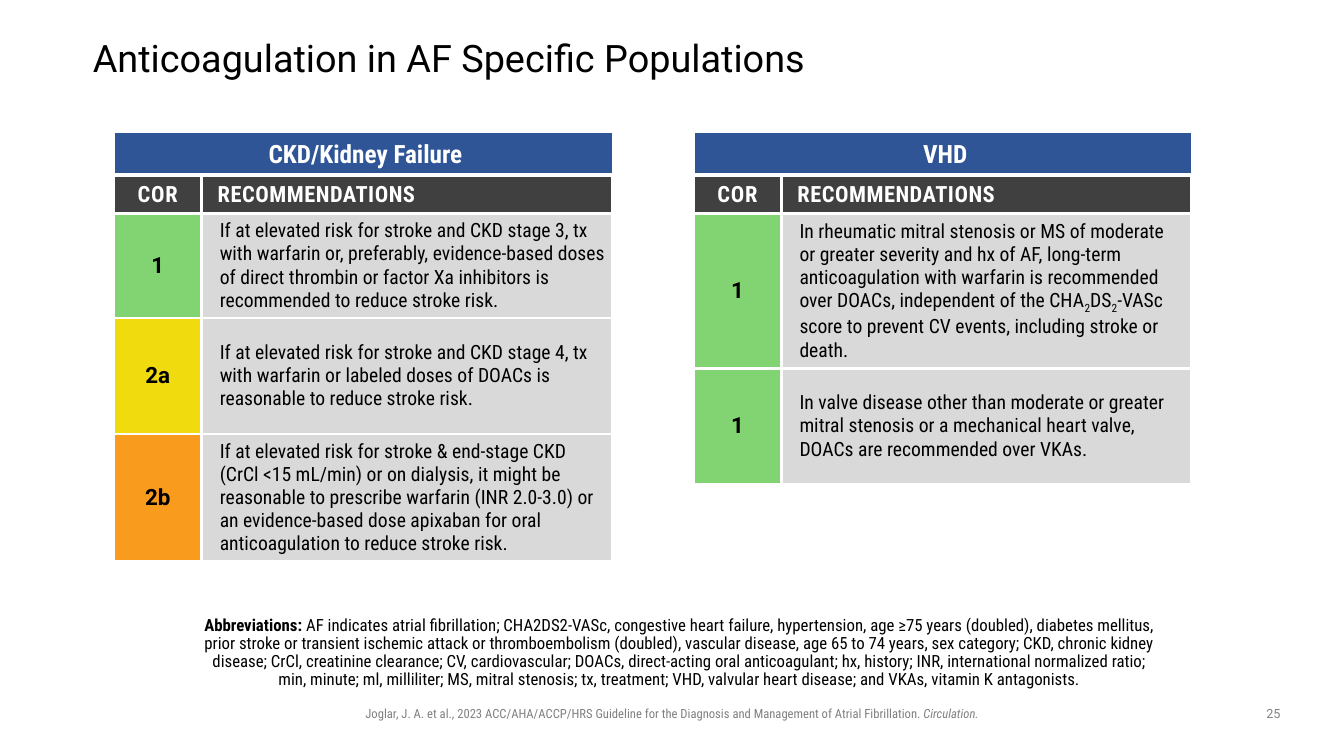
from dataclasses import dataclass
from typing import Any, NamedTuple

from lxml import etree
from pptx import Presentation
from pptx import util as u
from pptx.dml.color import RGBColor
from pptx.enum import shapes, text
from pptx.oxml.ns import qn

PX = 9144  # EMU in one px, 100 px to the inch


@dataclass(frozen=True)
class Theme:
    sans: str = "Roboto"
    condensed: str = "Roboto Condensed"
    white: str = "FFFFFF"
    black: str = "000000"
    grey: str = "808080"
    banner: str = "2F5597"
    header: str = "404040"
    body: str = "D9D9D9"
    title_size: int = 27
    banner_size: int = 18
    label_size: int = 16
    body_size: int = 14
    abbreviation_size: int = 12
    footer_size: int = 9
    border: float = 2.25


T = Theme()
COR_COLOURS = {"1": "82D472", "2a": "F0DB0E", "2b": "F99B1D"}
CENTER, LEFT = text.PP_ALIGN.CENTER, text.PP_ALIGN.LEFT
MIDDLE, TOP = text.MSO_ANCHOR.MIDDLE, text.MSO_ANCHOR.TOP


class Box(NamedTuple):
    left: int
    top: int
    width: int
    height: int


class Style(NamedTuple):
    size: int
    face: str
    colour: str = T.black
    bold: bool = False
    spacing: int = 0  # hundredths of a point


class Span(NamedTuple):
    text: str
    format: dict[str, Any] = {}
    baseline: int = 0  # thousandths of a percent


class Recommendation(NamedTuple):
    cor: str
    spans: list[Span]
    height: int


class Panel(NamedTuple):
    left: int
    name: str
    rows: list[Recommendation]


SUB = Span("2", baseline=-25000)

PANELS = [
    Panel(113, "CKD/Kidney Failure", [
        Recommendation("1", [Span(
            "If at elevated risk for stroke and CKD stage 3, tx with warfarin or, preferably, "
            "evidence-based doses of direct thrombin or factor Xa inhibitors is recommended "
            "to reduce stroke risk.")], 89),
        Recommendation("2a", [Span(
            "If at elevated risk for stroke and CKD stage 4, tx with warfarin or labeled doses "
            "of DOACs is reasonable to reduce stroke risk.")], 115),
        Recommendation("2b", [Span(
            "If at elevated risk for stroke & end-stage CKD (CrCl <15 mL/min) or on dialysis, "
            "it might be reasonable to prescribe warfarin (INR 2.0-3.0) or an evidence-based "
            "dose apixaban for oral anticoagulation to reduce stroke risk.")], 115),
    ]),
    Panel(688, "VHD", [
        Recommendation("1", [
            Span("In rheumatic mitral stenosis or MS of moderate "),
            Span("\n"),
            Span("or greater severity and hx of AF, long-term anticoagulation with warfarin is "
                 "recommended over DOACs, independent of the CHA"),
            SUB, Span("DS"), SUB,
            Span("-VASc score to prevent CV events, including stroke or death.")], 89),
        Recommendation("1", [Span(
            "In valve disease other than moderate or greater mitral stenosis or a mechanical "
            "heart valve, DOACs are recommended over VKAs.")], 115),
    ]),
]

ABBREVIATIONS = (
    "AF indicates atrial fibrillation; CHA2DS2-VASc, congestive heart failure, hypertension, "
    "age ≥75 years (doubled), diabetes mellitus, prior stroke or transient ischemic attack or "
    "thromboembolism (doubled), vascular disease, age 65 to 74 years, sex category; CKD, chronic "
    "kidney disease; CrCl, creatinine clearance; CV, cardiovascular; DOACs, direct-acting oral "
    "anticoagulant; hx, history; INR, international normalized ratio; min, minute; ml, milliliter; "
    "MS, mitral stenosis; tx, treatment; VHD, valvular heart disease; and VKAs, vitamin K "
    "antagonists.")


def emu(box: Box) -> list[int]:
    return [v * PX for v in box]


def set_all(target: Any, values: dict[str, Any]) -> None:
    for name, value in values.items():
        setattr(target, name, value)


def margins(left: int, top: int, right: int, bottom: int) -> dict[str, int]:
    return {"margin_left": left * PX, "margin_top": top * PX,
            "margin_right": right * PX, "margin_bottom": bottom * PX}


def write(p: Any, spans: list[Span], style: Style, align: Any) -> None:
    p.alignment = align
    for span in spans:
        if span.text == "\n":
            p.add_line_break()
            continue
        r = p.add_run()
        r.text = span.text
        set_all(r.font, {"size": u.Pt(style.size), "name": style.face,
                         "bold": style.bold} | span.format)
        r.font.color.rgb = RGBColor.from_string(style.colour)
        for name, value in (("spc", style.spacing), ("baseline", span.baseline)):
            if value:
                r._r.get_or_add_rPr().set(name, str(value))


def add_text(s: Any, box: Box, spans: list[Span], style: Style, align: Any = CENTER,
             anchor: Any = MIDDLE, inset: tuple = (0, 0, 0, 0), spacing: float = 0.9) -> None:
    tf = s.shapes.add_textbox(*emu(box)).text_frame
    set_all(tf, {"word_wrap": True, "vertical_anchor": anchor} | margins(*inset))
    p = tf.paragraphs[0]
    p.line_spacing = spacing
    write(p, spans, style, align)


def fill_cell(cell: Any, spans: list[Span], style: Style, colour: str,
              align: Any, inset: int, indent: int = 0) -> None:
    set_all(cell, {"vertical_anchor": MIDDLE} | margins(inset, 5, inset, 5))
    props = cell._tc.get_or_add_tcPr()
    for side in ("a:lnL", "a:lnR", "a:lnT", "a:lnB"):
        line = etree.SubElement(props, qn(side), w=str(int(u.Pt(T.border))))
        solid = etree.SubElement(line, qn("a:solidFill"))
        etree.SubElement(solid, qn("a:srgbClr"), val=T.white)
    cell.fill.solid()
    cell.fill.fore_color.rgb = RGBColor.from_string(colour)
    p = cell.text_frame.paragraphs[0]
    if indent:
        p._p.get_or_add_pPr().set("marL", str(indent * PX))
    write(p, spans, style, align)


def add_panel(s: Any, panel: Panel) -> None:
    # Banner
    sp = s.shapes.add_shape(shapes.MSO_SHAPE.RECTANGLE, *emu(Box(panel.left, 131, 495, 42)))
    sp.shadow.inherit = False
    sp.fill.solid()
    sp.fill.fore_color.rgb = RGBColor.from_string(T.banner)
    sp.line.color.rgb = RGBColor.from_string(T.white)
    sp.line.width = u.Pt(2)
    add_text(s, Box(panel.left + 9, 139, 481, 30), [Span(panel.name)],
             Style(T.banner_size, T.condensed, T.white, True))

    # Recommendations table
    heights = [38] + [row.height for row in panel.rows]
    frame = s.shapes.add_table(len(heights), 2, *emu(Box(panel.left, 174, 494, sum(heights))))
    table = frame.table
    set_all(table, {"first_row": False, "horz_banding": False})
    for column, width in zip(table.columns, (87, 407)):
        column.width = width * PX
    for row, height in zip(table.rows, heights):
        row.height = height * PX

    label = Style(T.label_size, T.condensed, T.white, True, 50)
    fill_cell(table.cell(0, 0), [Span("COR")], label, T.header, CENTER, 10)
    fill_cell(table.cell(0, 1), [Span("RECOMMENDATIONS")], label._replace(spacing=40),
              T.header, LEFT, 10, 6)
    for i, rec in enumerate(panel.rows, 1):
        fill_cell(table.cell(i, 0), [Span(rec.cor)], Style(T.label_size, T.sans, bold=True),
                  COR_COLOURS[rec.cor], CENTER, 5)
        fill_cell(table.cell(i, 1), rec.spans, Style(T.body_size, T.condensed),
                  T.body, LEFT, 5, 13)


def main() -> None:
    prs = Presentation()
    set_all(prs, {"slide_width": 1333 * PX, "slide_height": 750 * PX})
    s = prs.slides.add_slide(prs.slide_layouts[6])

    # Title and panels
    add_text(s, Box(92, 40, 838, 39), [Span("Anticoagulation in AF Specific Populations")],
             Style(T.title_size, T.sans), LEFT)
    for panel in PANELS:
        add_panel(s, panel)

    # Abbreviations, citation and page number
    add_text(s, Box(200, 607, 958, 72),
             [Span("Abbreviations: ", {"bold": True}), Span(ABBREVIATIONS)],
             Style(T.abbreviation_size, T.condensed), anchor=TOP, inset=(0, 5, 10, 5))
    footer = {"anchor": TOP, "inset": (10, 5, 10, 5), "spacing": 1.0}
    add_text(s, Box(294, 695, 745, 25),
             [Span("Joglar, J. A. et al., 2023 ACC/AHA/ACCP/HRS Guideline for the Diagnosis and "
                   "Management of Atrial Fibrillation. "), Span("Circulation.", {"italic": True})],
             Style(T.footer_size, T.condensed, T.grey), **footer)
    add_text(s, Box(1242, 695, 42, 26), [Span("25")],
             Style(T.footer_size, T.sans, T.grey), **footer)
    prs.save("out.pptx")


if __name__ == "__main__":
    main()
